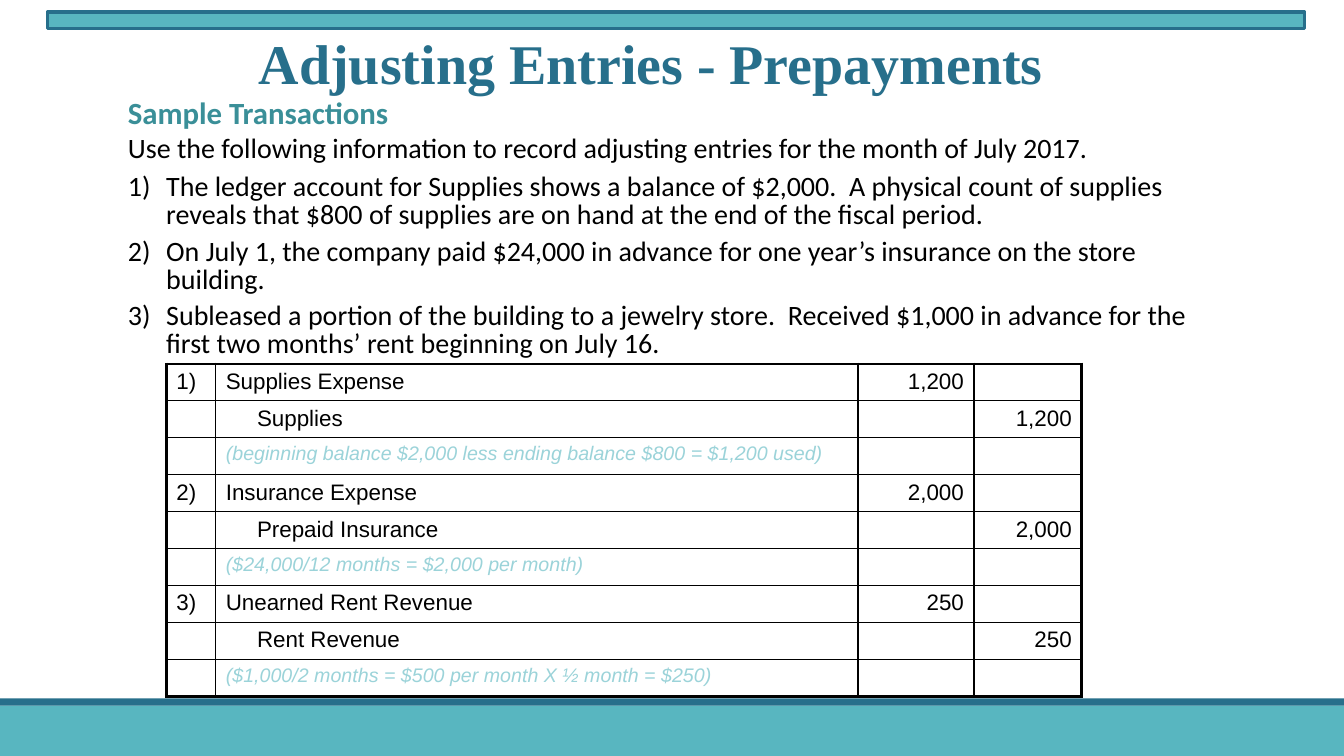
from lxml import etree
from pptx import Presentation, util as u
from pptx.dml.color import RGBColor
from pptx.enum import shapes, text
from pptx.oxml.ns import qn

TEAL = RGBColor(0x58, 0xB6, 0xC0)
BLUE = RGBColor(0x27, 0x6F, 0x8B)
DARK_TEAL = RGBColor(0x3A, 0x8F, 0x98)
PALE_TEAL = RGBColor(0x9B, 0xD3, 0xD9)
BLACK = RGBColor(0, 0, 0)

TRANSACTIONS = [
    "The ledger account for Supplies shows a balance of $2,000.  A physical count of supplies "
    "reveals that $800 of supplies are on hand at the end of the fiscal period.",
    "On July 1, the company paid $24,000 in advance for one year’s insurance on the store building.",
    "Subleased a portion of the building to a jewelry store.  Received $1,000 in advance for the "
    "first two months’ rent beginning on July 16.",
]
ENTRIES = [
    ("Supplies Expense", "Supplies", "1,200",
     "(beginning balance $2,000 less ending balance $800 = $1,200 used)"),
    ("Insurance Expense", "Prepaid Insurance", "2,000",
     "($24,000/12 months = $2,000 per month)"),
    ("Unearned Rent Revenue", "Rent Revenue", "250",
     "($1,000/2 months = $500 per month X ½ month = $250)"),
]
COLUMN_WIDTHS = [0.49, 6.37, 1.15, 1.07]
TABLE_HEIGHT = 3.3


def add_text(para, words, size=20, font="Calibri", color=BLACK, bold=False, italic=False, align=None):
    if align is not None:
        para.alignment = align
    span = para.add_run()
    span.text = words
    span.font.size = u.Pt(size)
    span.font.name = font
    span.font.color.rgb = color
    span.font.bold = bold
    span.font.italic = italic


def add_bar(page, left, top, width, height, fill, line=None):
    bar = page.shapes.add_shape(shapes.MSO_SHAPE.RECTANGLE, u.Inches(left), u.Inches(top),
                                u.Inches(width), u.Inches(height))
    bar.shadow.inherit = False
    bar.fill.solid()
    bar.fill.fore_color.rgb = fill
    if line is None:
        bar.line.fill.background()
    else:
        bar.line.color.rgb = line
        bar.line.width = u.Pt(2.25)


def add_box(page, left, top, width, height):
    box = page.shapes.add_textbox(u.Inches(left), u.Inches(top), u.Inches(width), u.Inches(height))
    box.text_frame.word_wrap = True
    return box.text_frame


def add_title(page, words):
    title = page.shapes.title
    title.left, title.top = u.Inches(2.42), u.Inches(0.23)
    title.width, title.height = u.Inches(8.07), u.Inches(0.77)
    frame = title.text_frame
    frame.word_wrap = False
    frame.auto_size = text.MSO_AUTO_SIZE.NONE
    frame.vertical_anchor = text.MSO_ANCHOR.TOP
    add_text(frame.paragraphs[0], words, size=40, font="Times New Roman", color=BLUE,
             bold=True, align=text.PP_ALIGN.CENTER)


def add_intro(page):
    para = add_box(page, 1.17, 0.88, 11, 0.81).paragraphs[0]
    add_text(para, "Sample Transactions", size=22, color=DARK_TEAL, bold=True)
    para.add_line_break()
    add_text(para, "Use the following information to record adjusting entries for the month of July 2017.")


def add_numbered_list(page, items):
    frame = add_box(page, 1.17, 1.68, 11, 1.95)
    for index, item in enumerate(items):
        para = frame.add_paragraph() if index else frame.paragraphs[0]
        para.line_spacing = u.Pt(20)
        para.space_after = u.Pt(6 if index < len(items) - 1 else 0)
        add_text(para, item)
        properties = para._p.get_or_add_pPr()
        properties.set("marL", str(u.Inches(0.38)))
        properties.set("indent", str(-u.Inches(0.38)))
        etree.SubElement(properties, qn("a:buAutoNum"), type="arabicParenR")


def set_borders(cell, widths):
    properties = cell._tc.get_or_add_tcPr()
    for side, width in zip("LRTB", widths):
        line = etree.SubElement(properties, qn(f"a:ln{side}"), w=str(u.Pt(width)))
        fill = etree.SubElement(line, qn("a:solidFill"))
        etree.SubElement(fill, qn("a:srgbClr"), val=str(BLACK))


def journal_rows():
    for number, (debit, credit, amount, note) in enumerate(ENTRIES, 1):
        yield f"{number})", debit, amount, ""
        yield "", credit, "", amount
        yield "", note, "", ""


def fill_cell(cell, words, row, column):
    is_account = column == 1
    if is_account and row % 3 == 1:
        cell.margin_left = u.Inches(0.41)
    para = cell.text_frame.paragraphs[0]
    align = text.PP_ALIGN.RIGHT if column > 1 else text.PP_ALIGN.LEFT
    if not words:
        etree.SubElement(para._p, qn("a:endParaRPr"), sz="1600")
    elif is_account and row % 3 == 2:
        add_text(para, words, size=14, font="Arial", color=PALE_TEAL, italic=True, align=align)
    else:
        add_text(para, words, size=16, font="Arial", align=align)


def add_journal(page):
    rows = list(journal_rows())
    last_row, last_column = len(rows) - 1, len(COLUMN_WIDTHS) - 1
    table = page.shapes.add_table(len(rows), len(COLUMN_WIDTHS), u.Inches(1.65), u.Inches(3.61),
                                  u.Inches(sum(COLUMN_WIDTHS)), u.Inches(TABLE_HEIGHT)).table
    table.first_row = table.horz_banding = False
    for column, width in zip(table.columns, COLUMN_WIDTHS):
        column.width = u.Inches(width)
    for row, values in enumerate(rows):
        table.rows[row].height = u.Inches(TABLE_HEIGHT / len(rows))
        for column, words in enumerate(values):
            cell = table.cell(row, column)
            outer = (column == 0, column == last_column, row == 0, row == last_row)
            set_borders(cell, [2.25 if edge else 1 for edge in outer])
            cell.fill.background()
            fill_cell(cell, words, row, column)


def main():
    deck = Presentation()
    deck.slide_width, deck.slide_height = u.Inches(13.33), u.Inches(7.5)
    page = deck.slides.add_slide(deck.slide_layouts[5])
    add_bar(page, 0, 7, 13.33, 0.5, TEAL)
    add_bar(page, 0, 6.93, 13.33, 0.07, BLUE)
    add_bar(page, 0.47, 0.12, 12.47, 0.16, TEAL, line=BLUE)
    add_intro(page)
    add_title(page, "Adjusting Entries - Prepayments")
    add_numbered_list(page, TRANSACTIONS)
    add_journal(page)
    deck.save("out.pptx")


if __name__ == "__main__":
    main()
